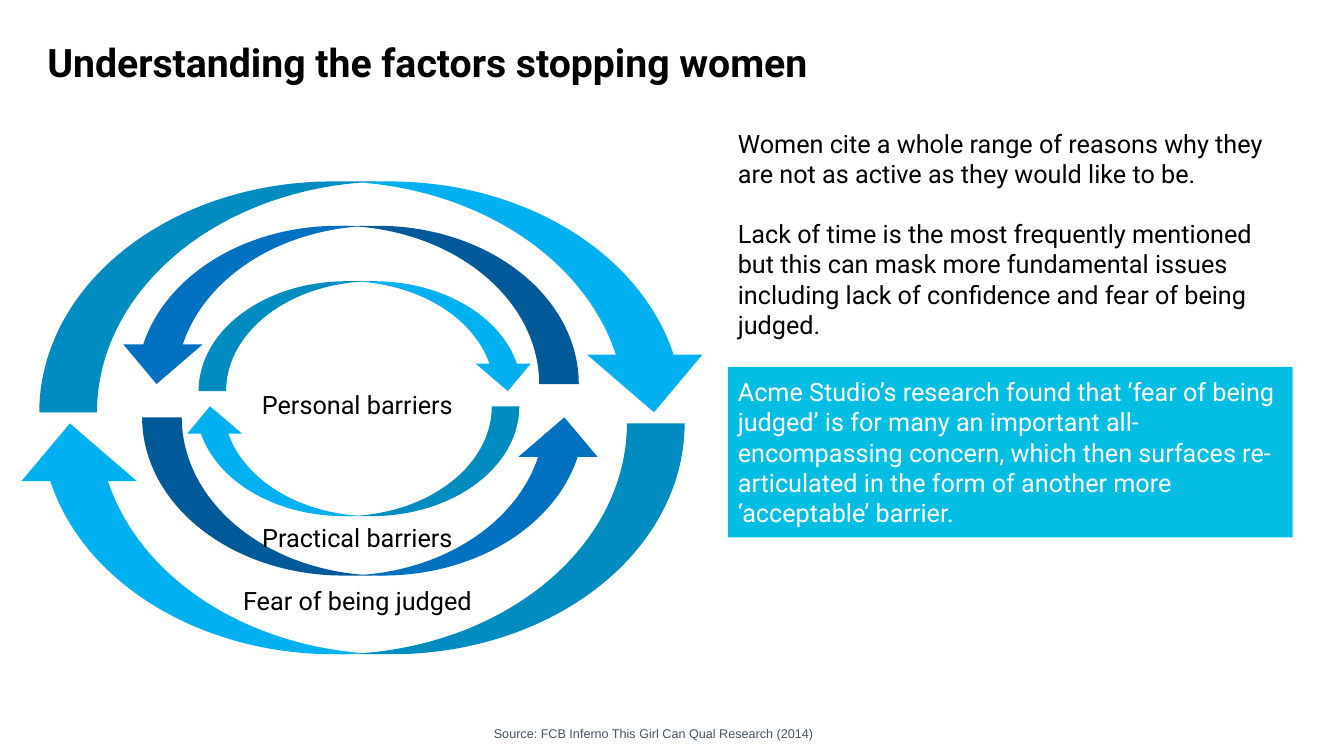
from pptx import Presentation
from pptx.dml.color import RGBColor
from pptx.enum.shapes import MSO_SHAPE as SHAPE
from pptx.enum.text import MSO_ANCHOR as ANCHOR, PP_ALIGN as ALIGN
from pptx.util import Inches, Pt

# Content
TITLE = "Understanding the factors stopping women"
REASONS = [
    "Women cite a whole range of reasons why they are not as active as they would like to be.",
    "Lack of time is the most frequently mentioned but this can mask more fundamental issues "
    "including lack of confidence and fear of being judged.",
]
FINDING = ("Acme Studio’s research found that ‘fear of being judged’ is for many an important "
           "all-encompassing concern, which then surfaces re-articulated in the form of another "
           "more ‘acceptable’ barrier.")
SOURCE = "Source: FCB Inferno This Girl Can Qual Research (2014)"

# Rings: colour, arrow size, then left, top, rotation and flip of each arrow
RINGS = [
    ("0070C0", (4.58, 1.57), [(1.41, 4.14, 0, None), (1.16, 2.24, 180, None)]),
    ("00B0F0", (3.34, 1.09), [(1.81, 4.03, 180, "flipV"), (1.97, 2.79, 0, "flipV")]),
    ("00B0F0", (6.67, 2.29), [(0.39, 1.8, 180, "flipH"), (0.12, 4.2, 180, "flipV")]),
]
RING_LABELS = [
    ("Fear of being judged", (2.22, 5.76, 2.65, 0.4)),
    ("Practical barriers", (2.48, 5.13, 2.13, 0.4)),
    ("Personal barriers", (2.47, 3.81, 2.15, 0.4)),
]
COLUMN_LEFT, COLUMN_WIDTH = 7.22, 5.6


def rgb(color):
    return RGBColor.from_string(color)


def box(*lengths):
    return [Inches(n) for n in lengths]


def add_shape(kind, place, color):
    s = slide.shapes.add_shape(kind, *box(*place))
    s.shadow.inherit = False
    s.fill.solid()
    s.fill.fore_color.rgb = rgb(color)
    s.line.fill.background()
    return s


def write(s, lines, size=18, color="000000", font="Roboto", align=ALIGN.LEFT,
          anchor=ANCHOR.TOP, wrap=True, gap=0, bold=False):
    tf = s.text_frame
    tf.word_wrap = wrap
    tf.vertical_anchor = anchor
    for i, line in enumerate(lines):
        p = tf.add_paragraph() if i else tf.paragraphs[0]
        p.text = line
        p.alignment = align
        if i:
            p.space_before = Pt(gap)
        p.font.name, p.font.size, p.font.bold = font, Pt(size), bold
        p.font.color.rgb = rgb(color)


prs = Presentation()
prs.slide_width, prs.slide_height = box(13.33, 7.5)
slide = prs.slides.add_slide(prs.slide_layouts[5])

# Title
title = slide.shapes.title
title.left, title.top, title.width, title.height = box(0.37, 0.02, 12, 1.25)
write(title, [TITLE], size=28, anchor=ANCHOR.MIDDLE, bold=True)
title.text_frame.paragraphs[0].line_spacing = 0.9

# Rings of curved arrows
for color, size, arrows in RINGS:
    for left, top, rotation, flip in arrows:
        arrow = add_shape(SHAPE.CURVED_UP_ARROW, (left, top, *size), color)
        arrow.rotation = rotation
        if flip:
            arrow._element.spPr.xfrm.set(flip, "1")

# Ring labels
for label, place in RING_LABELS:
    write(slide.shapes.add_textbox(*box(*place)), [label], align=ALIGN.CENTER, wrap=False)

# Right column
reasons = slide.shapes.add_textbox(*box(COLUMN_LEFT, 1.22, COLUMN_WIDTH, 2.31))
write(reasons, REASONS, gap=21.5)
finding = add_shape(SHAPE.RECTANGLE, (COLUMN_LEFT, 3.64, COLUMN_WIDTH, 1.69), "04BDE2")
write(finding, [FINDING], color="FFFFFF", anchor=ANCHOR.MIDDLE)

# Source line
source = slide.shapes.add_textbox(*box(4.8, 7.15, 3.43, 0.25))
write(source, [SOURCE], size=9, color="44546A", font="Arial", wrap=False)

prs.save("out.pptx")
